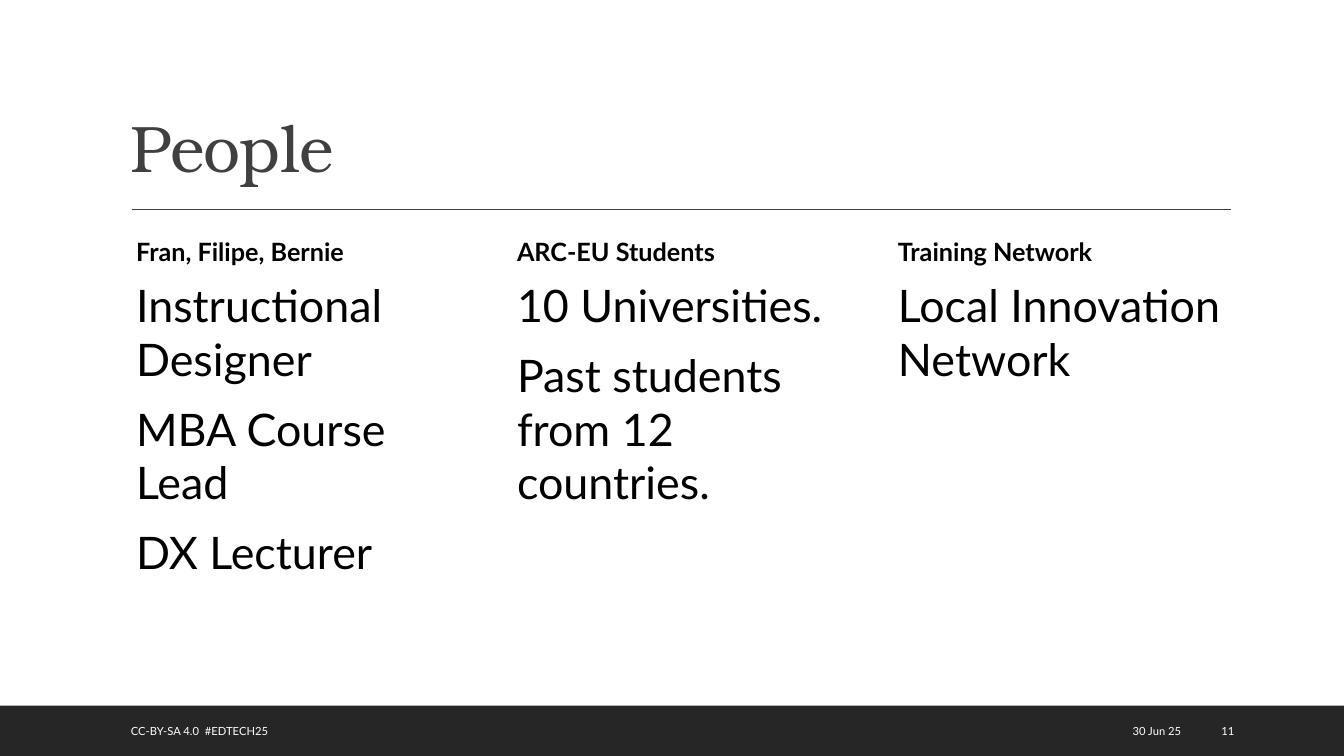
from pptx import Presentation
from pptx import util as u
from pptx.dml import color
from pptx.enum import shapes, text
from pptx.oxml import ns
from lxml import etree

COLORS = {"ink": "000000", "title": "404040", "bar": "262626", "light": "FFFFFF"}
WIDTH, HEIGHT = 33.87, 19.05
LEFT = 3.05
COLUMN_WIDTH, COLUMN_STEP = 8.74, 9.6
HEADING_TOP, HEADING_HEIGHT = 5.87, 1.04
BODY_HEIGHT = 9.4
BAR_HEIGHT = 1.27

COLUMNS = [
    ("Fran, Filipe, Bernie",
     ["Instructional Designer", "MBA Course Lead", "DX Lecturer"]),
    ("ARC-EU Students",
     ["10 Universities.", "Past students from 12 countries."]),
    ("Training Network", ["Local Innovation Network"]),
]
FOOTERS = [
    (22.83, 7.19, "30 Jun 25", text.PP_ALIGN.RIGHT),
    (LEFT, 18.95, "CC-BY-SA 4.0  #EDTECH25", text.PP_ALIGN.LEFT),
    (30.53, 2.16, "11", text.PP_ALIGN.LEFT),
]


def rgb(name):
    return color.RGBColor.from_string(COLORS[name])


def apply(target, values):
    """Set each named attribute of target."""
    for name, value in values.items():
        setattr(target, name, value)


class SlideBuilder:
    def __init__(self, page, font="Lato"):
        self.page = page
        self.font = font

    def bar(self, left, top, width, height, fill):
        bar = self.page.shapes.add_shape(
            shapes.MSO_SHAPE.RECTANGLE, *map(u.Cm, (left, top, width, height)))
        bar.shadow.inherit = False
        bar.fill.solid()
        bar.fill.fore_color.rgb = rgb(fill)
        bar.line.fill.background()

    def rule(self, start, end, top):
        rule = self.page.shapes.add_connector(
            shapes.MSO_CONNECTOR.STRAIGHT, *map(u.Cm, (start, top, end, top)))
        rule.line.color.rgb = rgb("title")
        rule.line.width = u.Pt(1)
        etree.SubElement(rule._element.spPr, ns.qn("a:effectLst"))

    def words(self, place, lines, size, ink="ink", font=None, bold=False,
              tracking=0, frame=None, layout=None):
        """Add a text box with one paragraph for each line."""
        box = self.page.shapes.add_textbox(*map(u.Cm, place))
        apply(box.text_frame, {"word_wrap": True, **(frame or {})})
        for index, line in enumerate(lines):
            para = (box.text_frame.add_paragraph() if index
                    else box.text_frame.paragraphs[0])
            apply(para, layout or {})
            span = para.add_run()
            span.text = line
            apply(span.font, {"name": font or self.font,
                              "size": u.Pt(size), "bold": bold})
            span.font.color.rgb = rgb(ink)
            if tracking:
                span.font._element.set("spc", str(round(tracking * 100)))

    def column(self, left, heading, lines):
        def margins(edge):
            return {"margin_left": u.Cm(0.38), "margin_right": u.Cm(edge),
                    "margin_top": u.Cm(edge), "margin_bottom": u.Cm(edge)}

        self.words((left, HEADING_TOP, COLUMN_WIDTH, HEADING_HEIGHT),
                   [heading], 18, bold=True, frame=margins(0.08))
        self.words((left, HEADING_TOP + HEADING_HEIGHT, COLUMN_WIDTH, BODY_HEIGHT),
                   lines, 32, frame=margins(0.1),
                   layout={"space_after": u.Pt(11.2)})


def main():
    deck = Presentation()
    apply(deck, {"slide_width": u.Cm(WIDTH), "slide_height": u.Cm(HEIGHT)})
    slide = SlideBuilder(deck.slides.add_slide(deck.slide_layouts[6]))

    slide.bar(0, HEIGHT - BAR_HEIGHT, WIDTH, BAR_HEIGHT, "bar")
    slide.rule(3.33, 31.01, 5.28)
    slide.words((LEFT, 0.79, 27.94, 4.04), ["People"], 47, ink="title",
                font="TeX Gyre Bonum", tracking=-0.5,
                frame={"vertical_anchor": text.MSO_ANCHOR.BOTTOM},
                layout={"line_spacing": 0.9})
    for index, (heading, lines) in enumerate(COLUMNS):
        slide.column(LEFT + index * COLUMN_STEP, heading, lines)
    for left, width, label, alignment in FOOTERS:
        slide.words((left, 17.91, width, 1.02), [label], 8, ink="light",
                    frame={"vertical_anchor": text.MSO_ANCHOR.MIDDLE},
                    layout={"alignment": alignment})
    deck.save("out.pptx")


if __name__ == "__main__":
    main()
